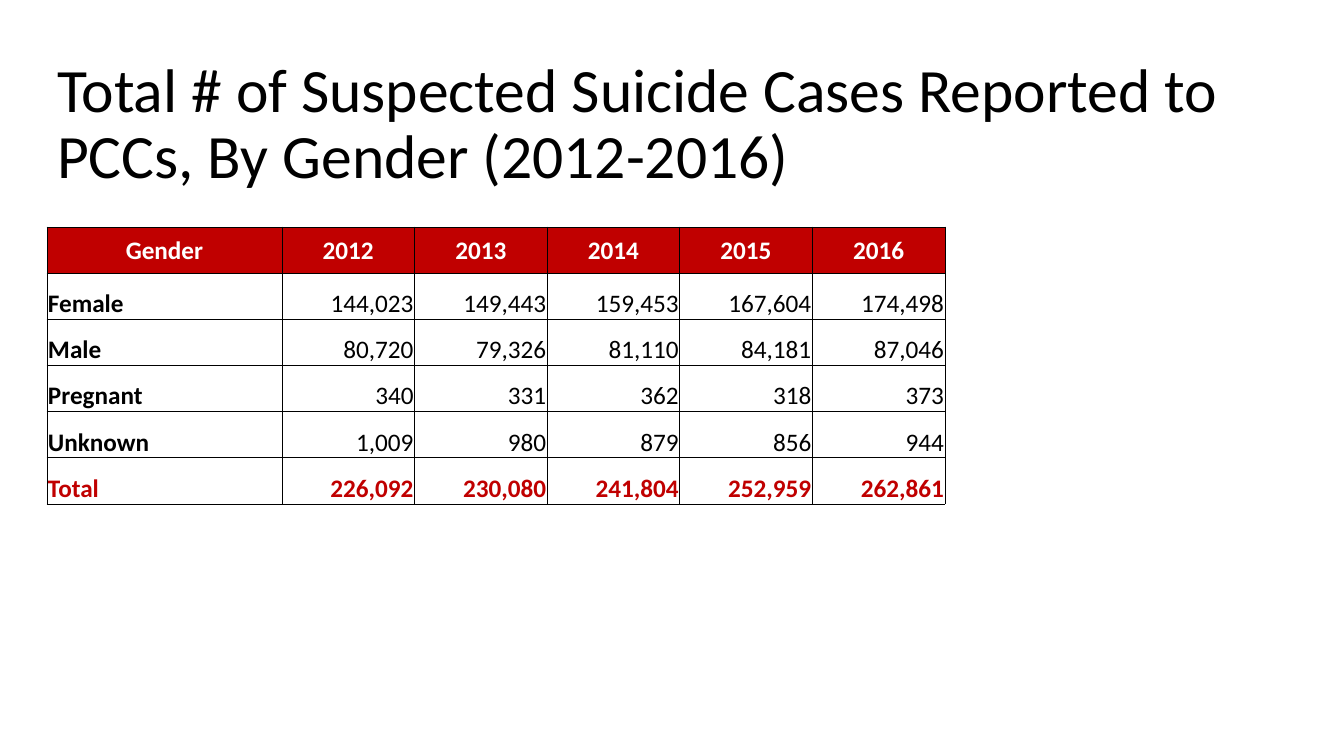
import pptx
import pptx.util
import pptx.dml.color
import pptx.enum.text
import lxml.etree

TITLE = "Total # of Suspected Suicide Cases Reported to PCCs, By Gender (2012-2016)"
CASES = [
    ("Gender", "2012", "2013", "2014", "2015", "2016"),
    ("Female", "144,023", "149,443", "159,453", "167,604", "174,498"),
    ("Male", "80,720", "79,326", "81,110", "84,181", "87,046"),
    ("Pregnant", "340", "331", "362", "318", "373"),
    ("Unknown", "1,009", "980", "879", "856", "944"),
    ("Total", "226,092", "230,080", "241,804", "252,959", "262,861"),
]
COLOURS = {"black": "000000", "white": "FFFFFF", "red": "C00000"}
FONT = "Calibri"
SLIDE_SIZE = (1344, 756)
TITLE_BOX = (47, 51, 1242, 149)
TABLE_BOX = (47, 227, 898, 277)
GENDER_WIDTH = 235
BORDER = pptx.util.Pt(0.5)
DRAWING = "http://schemas.openxmlformats.org/drawingml/2006/main"
ALIGN = pptx.enum.text.PP_ALIGN
ANCHOR = pptx.enum.text.MSO_ANCHOR


def px(length):
    return round(length * 914400 / 100.8)


def colour(name):
    return pptx.dml.color.RGBColor.from_string(COLOURS[name])


def apply(target, values):
    for name, value in values.items():
        setattr(target, name, value)


def write(frame, text, para_format, font_format, ink):
    frame.text = text
    para = frame.paragraphs[0]
    apply(para, para_format)
    span = para.runs[0]
    apply(span.font, {"name": FONT, **font_format})
    span.font.color.rgb = colour(ink)


def add_borders(cell):
    properties = cell._tc.get_or_add_tcPr()
    for side in ("lnL", "lnR", "lnT", "lnB"):
        line = lxml.etree.SubElement(properties, f"{{{DRAWING}}}{side}", w=str(int(BORDER)))
        fill = lxml.etree.SubElement(line, f"{{{DRAWING}}}solidFill")
        lxml.etree.SubElement(fill, f"{{{DRAWING}}}srgbClr", val=COLOURS["black"])


def add_title(page):
    box = page.shapes.title
    apply(box, dict(zip(("left", "top", "width", "height"), map(px, TITLE_BOX))))
    write(box.text_frame, TITLE, {"alignment": ALIGN.LEFT, "line_spacing": 0.9},
          {"size": pptx.util.Pt(44), "bold": False}, "black")
    apply(box.text_frame, {
        "word_wrap": True,
        "vertical_anchor": ANCHOR.MIDDLE,
        "auto_size": pptx.enum.text.MSO_AUTO_SIZE.NONE,
    })


def fill_cell(cell, text, row, column):
    header = row == 0
    total = row == len(CASES) - 1
    align = ALIGN.CENTER if header else ALIGN.RIGHT if column else ALIGN.LEFT
    ink = "white" if header else "red" if total else "black"
    apply(cell, {
        "margin_left": px(1), "margin_right": px(1),
        "margin_top": px(1), "margin_bottom": 0,
        "vertical_anchor": ANCHOR.MIDDLE if header else ANCHOR.BOTTOM,
    })
    write(cell.text_frame, text, {"alignment": align},
          {"size": pptx.util.Pt(18), "bold": header or total or column == 0}, ink)
    add_borders(cell)
    if header:
        cell.fill.solid()
        cell.fill.fore_color.rgb = colour("red")
    else:
        cell.fill.background()


def add_cases(page):
    row_count, column_count = len(CASES), len(CASES[0])
    table = page.shapes.add_table(row_count, column_count, *map(px, TABLE_BOX)).table
    apply(table, {"first_row": False, "horz_banding": False})
    year_width = (TABLE_BOX[2] - GENDER_WIDTH) / (column_count - 1)
    for index, column in enumerate(table.columns):
        column.width = px(year_width if index else GENDER_WIDTH)
    for row in table.rows:
        row.height = px(TABLE_BOX[3] / row_count)
    for row, texts in enumerate(CASES):
        for column, text in enumerate(texts):
            fill_cell(table.cell(row, column), text, row, column)


def main():
    deck = pptx.Presentation()
    deck.slide_width, deck.slide_height = map(px, SLIDE_SIZE)
    page = deck.slides.add_slide(deck.slide_layouts[5])
    page.background.fill.solid()
    page.background.fill.fore_color.rgb = colour("white")
    add_title(page)
    add_cases(page)
    deck.save("out.pptx")


if __name__ == "__main__":
    main()
